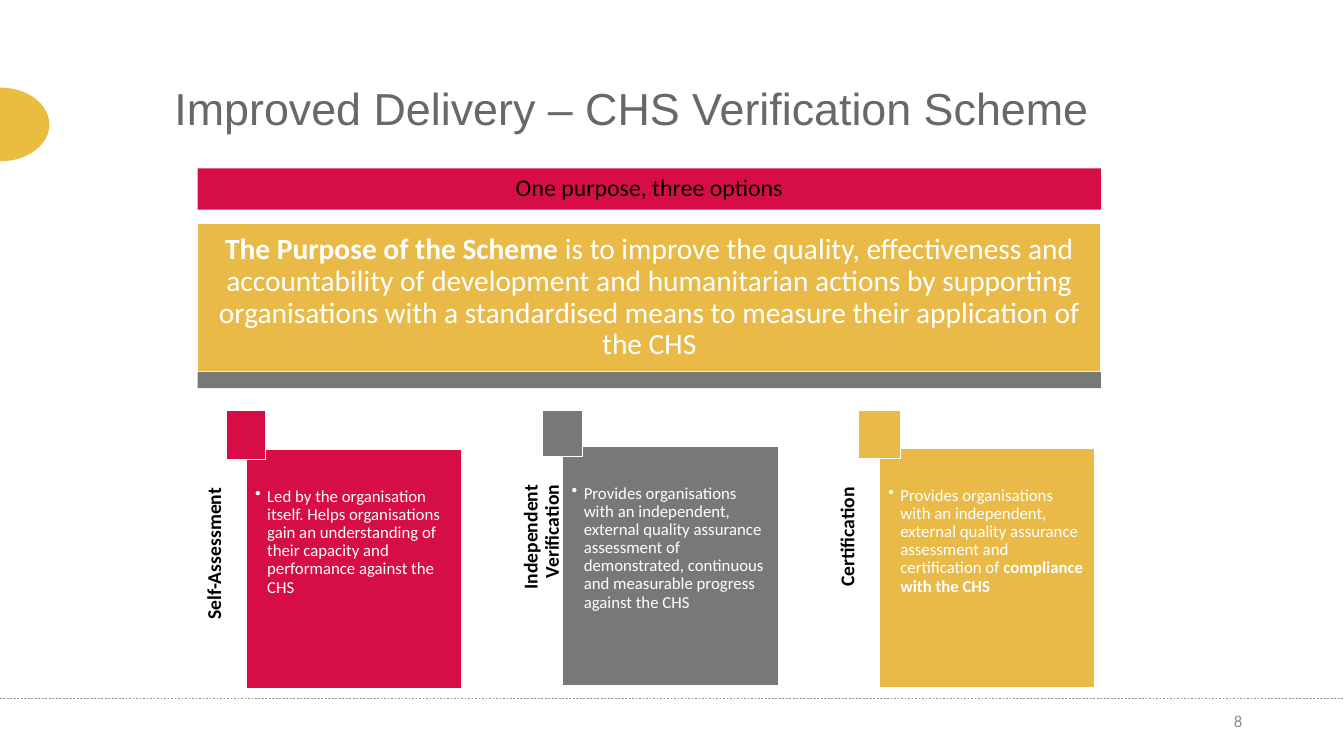
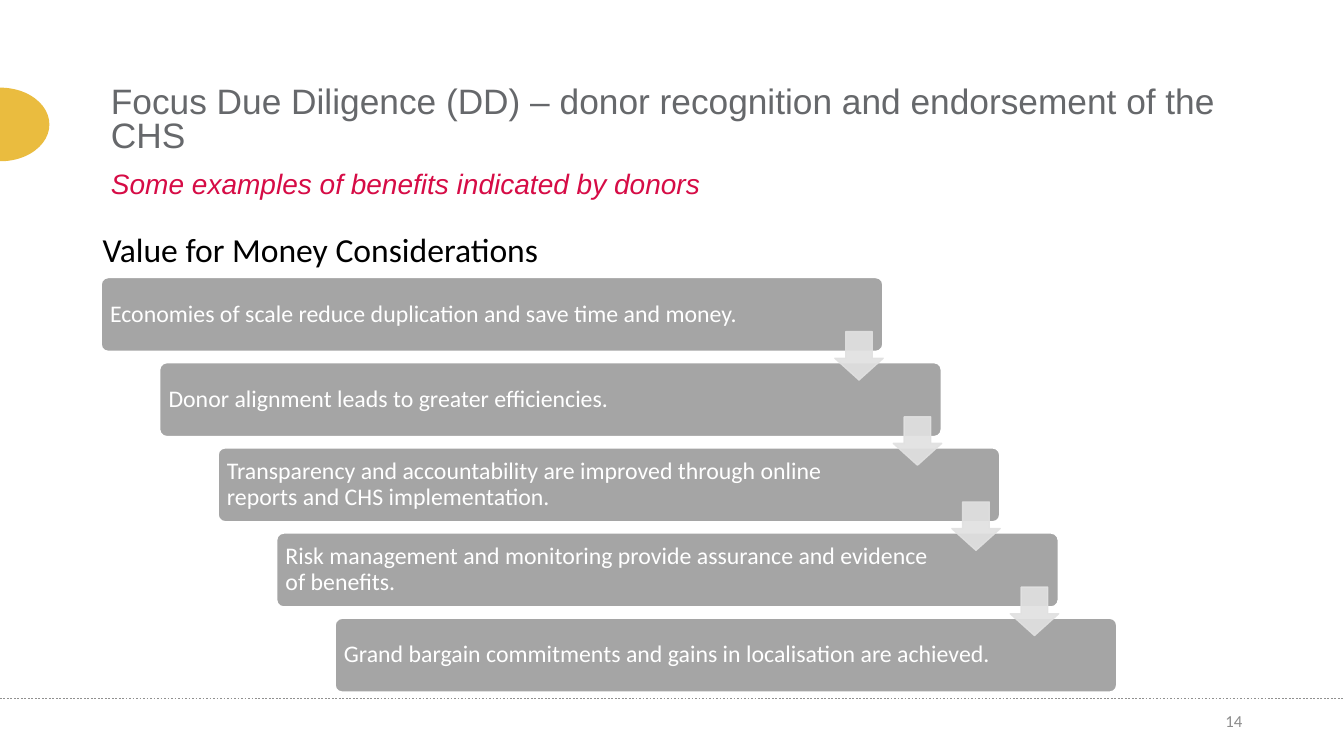
from lxml import etree
from pptx import Presentation
from pptx.dml.color import RGBColor
from pptx.enum.dml import MSO_LINE
from pptx.enum.shapes import MSO_CONNECTOR, MSO_SHAPE
from pptx.enum.text import MSO_ANCHOR, MSO_AUTO_SIZE, PP_ALIGN
from pptx.oxml.ns import qn
from pptx.util import Inches, Pt

RECTANGLE, ROUNDED = MSO_SHAPE.RECTANGLE, MSO_SHAPE.ROUNDED_RECTANGLE
ELLIPSE, DOWN_ARROW = MSO_SHAPE.OVAL, MSO_SHAPE.DOWN_ARROW
STRAIGHT, DOTTED = MSO_CONNECTOR.STRAIGHT, MSO_LINE.ROUND_DOT
LEFT, CENTER, RIGHT = PP_ALIGN.LEFT, PP_ALIGN.CENTER, PP_ALIGN.RIGHT
TOP, MIDDLE = MSO_ANCHOR.TOP, MSO_ANCHOR.MIDDLE
FIXED_SIZE = MSO_AUTO_SIZE.NONE
TITLE_ONLY, TITLE_AND_BODY = 5, 1
WIDTH, HEIGHT = 13.33, 7.5
DEFAULT_INSETS = (0.1, 0.05, 0.1, 0.05)

COLORS = {
    "accent": "EABC3F",
    "rule": "90908F",
    "number": "8C8C8C",
    "title": "66686B",
    "subtitle": "D60C46",
    "red": "D60D46",
    "grey": "777877",
    "yellow": "E9BA47",
    "row": "A5A5A5",
    "arrow": "E1E1E1",
    "white": "FFFFFF",
    "black": "000000",
}


def rgb(name):
    return RGBColor.from_string(COLORS[name])


class Deck:
    """Holds the shared style and the slide being built."""

    def __init__(self):
        self.presentation = Presentation()
        self.presentation.slide_width = Inches(WIDTH)
        self.presentation.slide_height = Inches(HEIGHT)
        self.slide = None

    def new_slide(self, layout, number):
        layouts = self.presentation.slide_layouts
        self.slide = self.presentation.slides.add_slide(layouts[layout])
        # Side accent, footer rule and page number
        self.shape(ELLIPSE, (-0.48, 0.87, 0.97, 0.73), "accent")
        self.rule(6.93)
        self.text_box((9.42, 6.95, 3, 0.4), [number], 12, "number",
                      align=RIGHT, anchor=MIDDLE)

    def rule(self, top):
        connector = self.slide.shapes.add_connector(
            STRAIGHT, 0, Inches(top), Inches(WIDTH), Inches(top))
        connector.line.color.rgb = rgb("rule")
        connector.line.width = Pt(1.25)
        connector.line.dash_style = DOTTED
        etree.SubElement(connector._element.spPr, qn("a:effectLst"))

    def shape(self, kind, box, fill, outline=None, width=1, adjustments=(), opacity=None):
        shape = self.slide.shapes.add_shape(kind, *map(Inches, box))
        shape.shadow.inherit = False
        for index, value in enumerate(adjustments):
            shape.adjustments[index] = value
        shape.fill.solid()
        shape.fill.fore_color.rgb = rgb(fill)
        if outline:
            shape.line.color.rgb = rgb(outline)
            shape.line.width = Pt(width)
        else:
            shape.line.fill.background()
        if opacity:
            for color in shape._element.spPr.iter(qn("a:srgbClr")):
                etree.SubElement(color, qn("a:alpha"), val=str(opacity * 1000))
        return shape

    def set_text(self, shape, runs, size, color, font="Calibri", align=LEFT, anchor=TOP,
                 insets=DEFAULT_INSETS, spacing=1.0, bold=None, italic=None, bullet=None):
        """Fill a shape with one paragraph; a run is a string or (string, bold)."""
        frame = shape.text_frame
        frame.word_wrap = True
        frame.auto_size = FIXED_SIZE
        frame.vertical_anchor = anchor
        (frame.margin_left, frame.margin_top,
         frame.margin_right, frame.margin_bottom) = map(Inches, insets)
        paragraph = frame.paragraphs[0]
        for item in runs:
            text, strong = item if isinstance(item, tuple) else (item, None)
            run = paragraph.add_run()
            run.text = text
            if strong:
                run.font.bold = True
        paragraph.alignment = align
        paragraph.line_spacing = spacing
        paragraph.space_before = Pt(0)
        # Bullet with a hanging indent, or none at all
        properties = paragraph._p.get_or_add_pPr()
        indent = Inches(0.12) if bullet else 0
        properties.set("marL", str(indent))
        properties.set("indent", str(-indent))
        if bullet:
            etree.SubElement(properties, qn("a:buChar"), char=bullet)
        else:
            etree.SubElement(properties, qn("a:buNone"))
        paragraph.font.name = font
        paragraph.font.size = Pt(size)
        paragraph.font.color.rgb = rgb(color)
        paragraph.font.bold = bold
        paragraph.font.italic = italic

    def text_box(self, box, runs, size, color, rotation=0, **style):
        shape = self.slide.shapes.add_textbox(*map(Inches, box))
        shape.rotation = rotation
        self.set_text(shape, runs, size, color, **style)

    def placeholder(self, index, box, text, size, color, **style):
        shape = self.slide.placeholders[index]
        shape.left, shape.top, shape.width, shape.height = map(Inches, box)
        self.set_text(shape, [text], size, color, font="Arial", **style)

    def title(self, box, text, size, spacing=1.0):
        self.placeholder(0, box, text, size, "title", spacing=spacing)

    def subtitle(self, box, text):
        self.placeholder(1, box, text, 20, "subtitle", italic=True)

    def card(self, left, top, label, runs, color, tab_width):
        width, height = 2.14, 2.37
        label_height, label_center = 0.43, left - 0.2
        # Label turned to read upwards beside the card
        self.text_box((label_center - height / 2, top + (height - label_height) / 2,
                       height, label_height),
                      [label], 14, "black", rotation=270, align=RIGHT,
                      insets=(0, 0, 0.38, 0), spacing=0.9, bold=True)
        card = self.shape(RECTANGLE, (left, top, width, height), color, "white")
        self.set_text(card, runs, 12, "white", insets=(0.09, 0.38, 0.09, 0.09),
                      spacing=0.9, bullet="•")
        # Small tab over the top left corner
        tab_top = 4.07
        self.shape(RECTANGLE, (left - tab_width / 2, tab_top, tab_width, top + 0.1 - tab_top),
                   color, "white")

    def step(self, left, top, text):
        step = self.shape(ROUNDED, (left, top, 7.76, 0.74), "row", "white", 1.5, [0.1])
        self.set_text(step, [text], 17, "white", anchor=MIDDLE,
                      insets=(0.07, 0.07, 1.14, 0.07), spacing=0.9)

    def step_arrow(self, left, top):
        self.shape(DOWN_ARROW, (left, top, 0.48, 0.48), "arrow", "arrow",
                   adjustments=[0.55, 0.45], opacity=90)


def build_verification_slide(deck):
    deck.new_slide(TITLE_ONLY, "8")
    deck.title((1.63, 0.75, 11.03, 0.77), "Improved Delivery – CHS Verification Scheme", 32)

    # Three options
    cards = [
        (4.46, "Self-Assessment", "red", 0.39,
         ["Led by the organisation itself. Helps organisations gain an understanding "
          "of their capacity and performance against the CHS"]),
        (4.43, "Independent Verification", "grey", 0.4,
         ["Provides organisations with an independent, external quality assurance "
          "assessment of demonstrated, continuous and measurable progress against the CHS"]),
        (4.45, "Certification", "yellow", 0.42,
         ["Provides organisations with an independent, external quality assurance "
          "assessment and certification of ", ("compliance with the CHS", True)]),
    ]
    for index, (top, label, color, tab_width, runs) in enumerate(cards):
        deck.card(2.44 + 3.14 * index, top, label, runs, color, tab_width)

    # Purpose banner
    left, width = 1.96, 8.96
    heading = deck.shape(RECTANGLE, (left, 1.67, width, 0.41), "red")
    deck.set_text(heading, ["One purpose, three options"], 17, "black", align=CENTER,
                  anchor=MIDDLE, insets=(0.07,) * 4, spacing=0.9)
    purpose = deck.shape(RECTANGLE, (left, 2.22, width, 1.47), "yellow", "white")
    deck.set_text(purpose,
                  [("The Purpose of the Scheme ", True),
                   "is to improve the quality, effectiveness and accountability of development "
                   "and humanitarian actions by supporting organisations with a standardised "
                   "means to measure their application of the CHS"],
                  21, "white", align=CENTER, anchor=MIDDLE, insets=(0.09,) * 4, spacing=0.9)
    deck.shape(RECTANGLE, (left, 3.69, width, 0.16), "grey")


def build_donor_slide(deck):
    deck.new_slide(TITLE_AND_BODY, "14")
    deck.title((1, 0.82, 11.33, 0.77),
               "Focus Due Diligence (DD) – donor recognition and endorsement of the CHS",
               25.2, spacing=0.8)
    deck.subtitle((1, 1.6, 11.33, 0.45), "Some examples of benefits indicated by donors")
    deck.text_box((0.92, 2.22, 4.8, 0.5), ["Value for Money Considerations"], 24, "black")

    # Staircase of benefits, with an arrow from each step to the next
    benefits = [
        "Economies of scale reduce duplication and save time and money.",
        "Donor alignment leads to greater efficiencies.",
        "Transparency and accountability are improved through online reports "
        "and CHS implementation.",
        "Risk management and monitoring provide assurance and evidence of benefits.",
        "Grand bargain commitments and gains in localisation are achieved.",
    ]
    shift, pitch = 0.58, 3.38 / 4
    for index, benefit in enumerate(benefits):
        deck.step(1 + shift * index, 2.75 + pitch * index, benefit)
    for index in range(len(benefits) - 1):
        deck.step_arrow(8.28 + shift * index, 3.29 + pitch * index)


def main():
    deck = Deck()
    build_verification_slide(deck)
    build_donor_slide(deck)
    deck.presentation.save("out.pptx")


if __name__ == "__main__":
    main()
